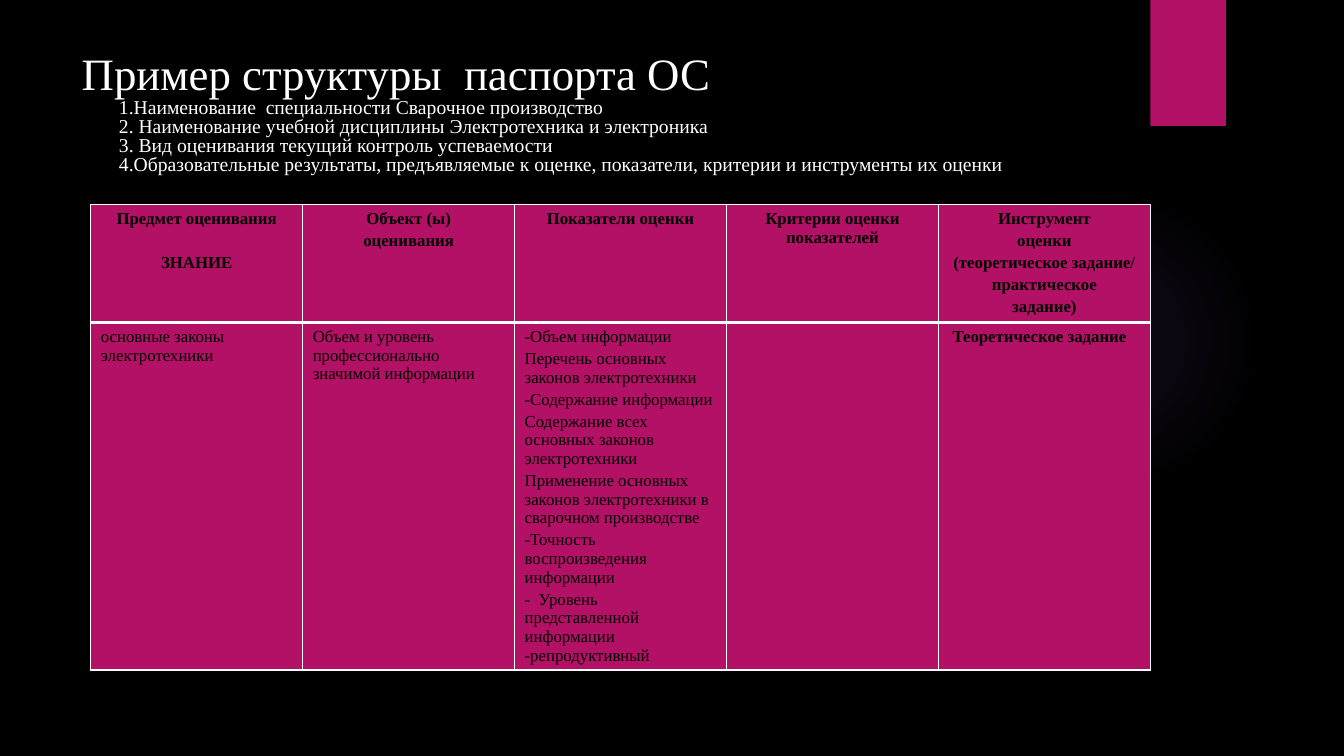
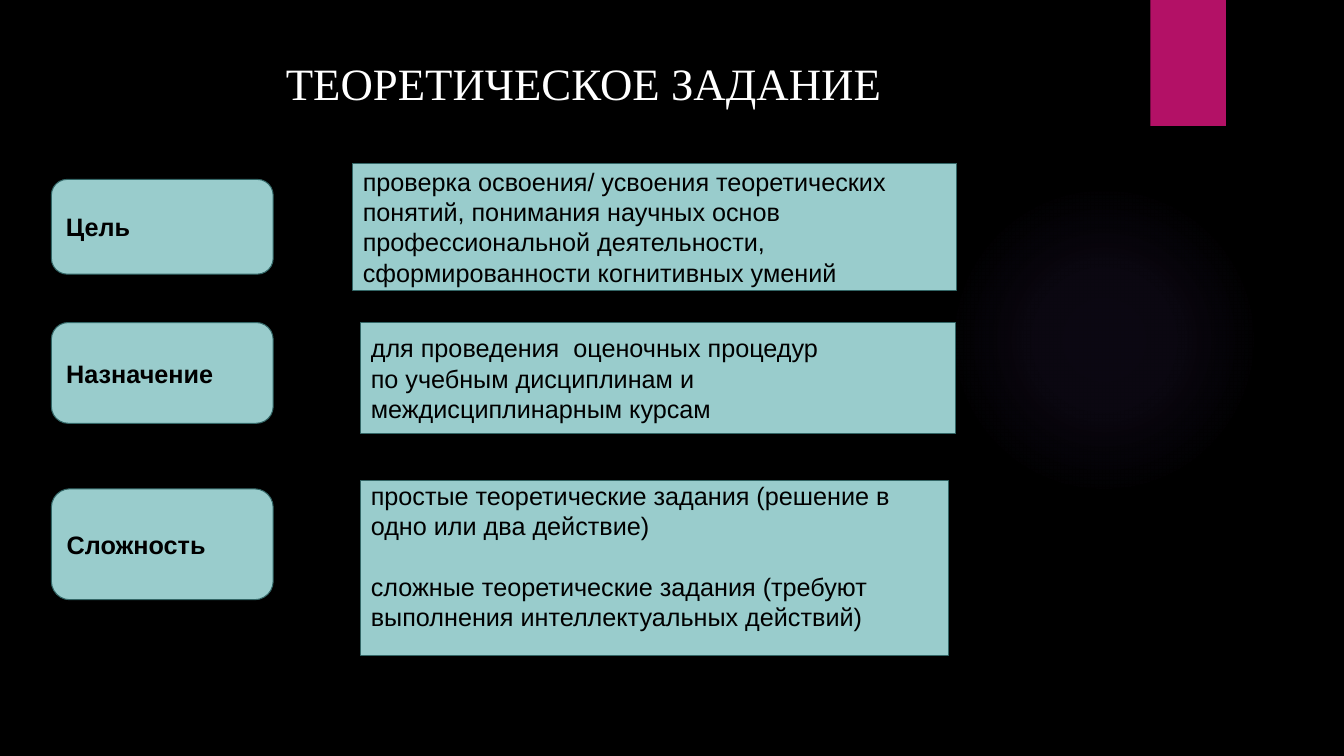
from pptx import Presentation
from pptx.dml.color import RGBColor
from pptx.enum.shapes import MSO_SHAPE
from pptx.enum.text import MSO_ANCHOR, MSO_AUTO_SIZE, PP_ALIGN
from pptx.oxml import parse_xml
from pptx.oxml.ns import nsdecls
from pptx.util import Inches, Pt

RECTANGLE, ROUNDED, OVAL = MSO_SHAPE.RECTANGLE, MSO_SHAPE.ROUNDED_RECTANGLE, MSO_SHAPE.OVAL
TOP, MIDDLE = MSO_ANCHOR.TOP, MSO_ANCHOR.MIDDLE
LEFT, CENTER = PP_ALIGN.LEFT, PP_ALIGN.CENTER

COLORS = {"background": "000000", "accent": "B31166", "glow": "9B6BF2", "light": "FFFFFF",
          "dark": "000000", "card": "99CCCC", "card_line": "336666"}
SERIF, SANS = "Times New Roman", "Arial"
LAYOUT_CONTENT, LAYOUT_TITLE = 1, 5

# Boxes are left, top, width, height in inches
GLOW_BOX = (9.41, 1.83, 3.08, 3.08)
BAND_BOX = (11.41, 0, 0.75, 1.25)
LIST_BOX = (1.18, 0.99, 9.8, 0.85)
TABLE_BOX = (0.9, 2.03, 10.51, 4.43)
CARDS_BOX = (0.51, 1.62, 8.98, 4.88)
TITLE_LEFT, TITLE_WIDTH, TITLE_HEIGHT = 0.71, 10.16, 0.6
HEADER_SHARE = 0.264

PASSPORT_ITEMS = [
    "1.Наименование  специальности Сварочное производство",
    "2. Наименование учебной дисциплины Электротехника и электроника",
    "3. Вид оценивания текущий контроль успеваемости",
    "4.Образовательные результаты, предъявляемые к оценке, показатели, критерии и инструменты их оценки",
]
TABLE_ROWS = [
    [["Предмет оценивания", "ЗНАНИЕ"],
     ["Объект (ы)", "оценивания"],
     ["Показатели оценки"],
     ["Критерии оценки показателей"],
     ["Инструмент", "оценки", "(теоретическое задание/", "практическое", "задание)"]],
    [["основные законы электротехники"],
     ["Объем и уровень профессионально значимой информации"],
     ["-Объем информации",
      "Перечень основных законов электротехники",
      "-Содержание информации",
      "Содержание всех основных законов электротехники",
      "Применение основных законов электротехники в сварочном производстве",
      "-Точность  воспроизведения информации",
      "-  Уровень представленной информации -репродуктивный"],
     [],
     ["Теоретическое задание"]],
]
# Label, its top and height; description left, top, width, height, bottom inset; paragraphs
CARD_ROWS = [
    ("Цель", (0.16, 0.94), (2.99, 0, 5.99, 1.26, 0),
     ["проверка освоения/ усвоения теоретических\vпонятий, понимания научных основ\v"
      "профессиональной деятельности,\vсформированности когнитивных умений"]),
    ("Назначение", (1.58, 1), (3.07, 1.58, 5.9, 1.1, 0),
     ["для проведения  оценочных процедур\vпо учебным дисциплинам и\vмеждисциплинарным курсам"]),
    ("Сложность", (3.23, 1.1), (3.07, 3.15, 5.83, 1.73, 0.24),
     ["простые теоретические задания (решение в\vодно или два действие)",
      "сложные теоретические задания (требуют\vвыполнения интеллектуальных действий)"]),
]


def color(name):
    return RGBColor.from_string(COLORS[name])


def place(shape, box):
    shape.left, shape.top, shape.width, shape.height = (Inches(length) for length in box)


def write(text_frame, texts, size, font, ink, bold=False, align=LEFT, gap=0):
    """Fill a text frame with paragraphs that share one style."""
    for index, text in enumerate(texts):
        paragraph = text_frame.paragraphs[0] if index == 0 else text_frame.add_paragraph()
        paragraph.text = text
        paragraph.alignment = align
        paragraph.space_before = Pt(gap if index else 0)
        paragraph.font.size, paragraph.font.name = Pt(size), font
        paragraph.font.bold = bold
        paragraph.font.color.rgb = color(ink)


def set_frame(text_frame, anchor, sides=0.1, bottom=0):
    text_frame.word_wrap = True
    text_frame.auto_size = MSO_AUTO_SIZE.NONE
    text_frame.vertical_anchor = anchor
    text_frame.margin_left = text_frame.margin_right = Inches(sides)
    text_frame.margin_top, text_frame.margin_bottom = 0, Inches(bottom)


def add_box(slide, kind, box, fill, line=None):
    shape = slide.shapes.add_shape(kind, *(Inches(length) for length in box))
    shape.shadow.inherit = False
    shape.fill.solid()
    shape.fill.fore_color.rgb = color(fill)
    if line:
        shape.line.color.rgb = color(line)
        shape.line.width = Pt(0.75)
    else:
        shape.line.fill.background()
    return shape


def add_glow(slide, box):
    glow = add_box(slide, OVAL, box, "glow")
    stops = "".join(
        f'<a:gs pos="{position * 1000}"><a:srgbClr val="{COLORS["glow"]}">'
        f'<a:alpha val="{alpha * 1000}"/></a:srgbClr></a:gs>'
        for position, alpha in ((0, 7), (36, 6), (69, 0), (100, 0)))
    gradient = parse_xml(
        f'<a:gradFill {nsdecls("a")}><a:gsLst>{stops}</a:gsLst><a:path path="circle">'
        '<a:fillToRect l="50000" t="50000" r="50000" b="50000"/></a:path></a:gradFill>')
    properties = glow.element.spPr
    properties.replace(properties.find("{*}solidFill"), gradient)


def start_slide(presentation, layout, title, top, align):
    """Add a slide with the shared glow, band and title."""
    slide = presentation.slides.add_slide(presentation.slide_layouts[layout])
    add_glow(slide, GLOW_BOX)
    add_box(slide, RECTANGLE, BAND_BOX, "accent")
    heading = slide.shapes.title
    place(heading, (TITLE_LEFT, top, TITLE_WIDTH, TITLE_HEIGHT))
    set_frame(heading.text_frame, TOP)
    write(heading.text_frame, [title], 32, SERIF, "light", align=align)
    return slide


def fill_list(placeholder, items, box):
    place(placeholder, box)
    text_frame = placeholder.text_frame
    set_frame(text_frame, TOP, sides=0)
    write(text_frame, items, 14, SERIF, "light")
    for paragraph in text_frame.paragraphs:
        paragraph.line_spacing = 0.8
        properties = paragraph._p.get_or_add_pPr()
        properties.set("marL", "0")
        properties.set("indent", "0")
        properties.insert_element_before(parse_xml(f'<a:buNone {nsdecls("a")}/>'),
                                         "a:tabLst", "a:defRPr", "a:extLst")


def set_borders(cell, is_header):
    """Thin white lines, with a heavy one under the header row."""
    widths = {"L": 1, "R": 1, "T": 1 if is_header else 3, "B": 3 if is_header else 1}
    properties = cell._tc.get_or_add_tcPr()
    for index, (side, width) in enumerate(widths.items()):
        properties.insert(index, parse_xml(
            f'<a:ln{side} {nsdecls("a")} w="{Pt(width)}"><a:solidFill>'
            f'<a:srgbClr val="{COLORS["light"]}"/></a:solidFill></a:ln{side}>'))


def add_passport_table(slide, rows, box):
    left, top, width, height = box
    table = slide.shapes.add_table(len(rows), len(rows[0]), Inches(left), Inches(top),
                                   Inches(width), Inches(height)).table
    for row, share in zip(table.rows, (HEADER_SHARE, 1 - HEADER_SHARE)):
        row.height = Inches(height * share)
    for row_index, row in enumerate(rows):
        is_header = row_index == 0
        for column_index, texts in enumerate(row):
            cell = table.cell(row_index, column_index)
            cell.fill.solid()
            cell.fill.fore_color.rgb = color("accent")
            set_borders(cell, is_header)
            is_last = column_index == len(row) - 1
            write(cell.text_frame, texts, 12, SERIF, "dark", bold=is_header or is_last,
                  align=CENTER if is_header else LEFT, gap=2.4)
    # The kind of result stands apart from the first heading
    table.cell(0, 0).text_frame.paragraphs[1].space_before = Pt(18)
    table.cell(1, len(rows[0]) - 1).margin_left = Inches(0.14)


def add_cards(slide, rows, box):
    left, top = box[:2]
    for label, (label_top, label_height), description, texts in rows:
        name_card = add_box(slide, ROUNDED, (left, top + label_top, 2.2, label_height),
                            "card", "card_line")
        set_frame(name_card.text_frame, MIDDLE)
        write(name_card.text_frame, [label], 18, SANS, "dark", bold=True)

        offset_x, offset_y, width, height, bottom = description
        text_card = add_box(slide, RECTANGLE, (left + offset_x, top + offset_y, width, height),
                            "card", "card_line")
        set_frame(text_card.text_frame, MIDDLE, bottom=bottom)
        write(text_card.text_frame, texts, 18, SANS, "dark", gap=21.6)


def build_passport_slide(presentation):
    slide = start_slide(presentation, LAYOUT_CONTENT, "Пример структуры  паспорта ОС", 0.45, LEFT)
    fill_list(slide.placeholders[1], PASSPORT_ITEMS, LIST_BOX)
    add_passport_table(slide, TABLE_ROWS, TABLE_BOX)


def build_task_slide(presentation):
    slide = start_slide(presentation, LAYOUT_TITLE, "ТЕОРЕТИЧЕСКОЕ ЗАДАНИЕ", 0.55, CENTER)
    add_cards(slide, CARD_ROWS, CARDS_BOX)


def main():
    presentation = Presentation()
    presentation.slide_width, presentation.slide_height = Inches(13.33), Inches(7.5)
    background = presentation.slide_master.background.fill
    background.solid()
    background.fore_color.rgb = color("background")
    build_passport_slide(presentation)
    build_task_slide(presentation)
    presentation.save("out.pptx")


if __name__ == "__main__":
    main()
